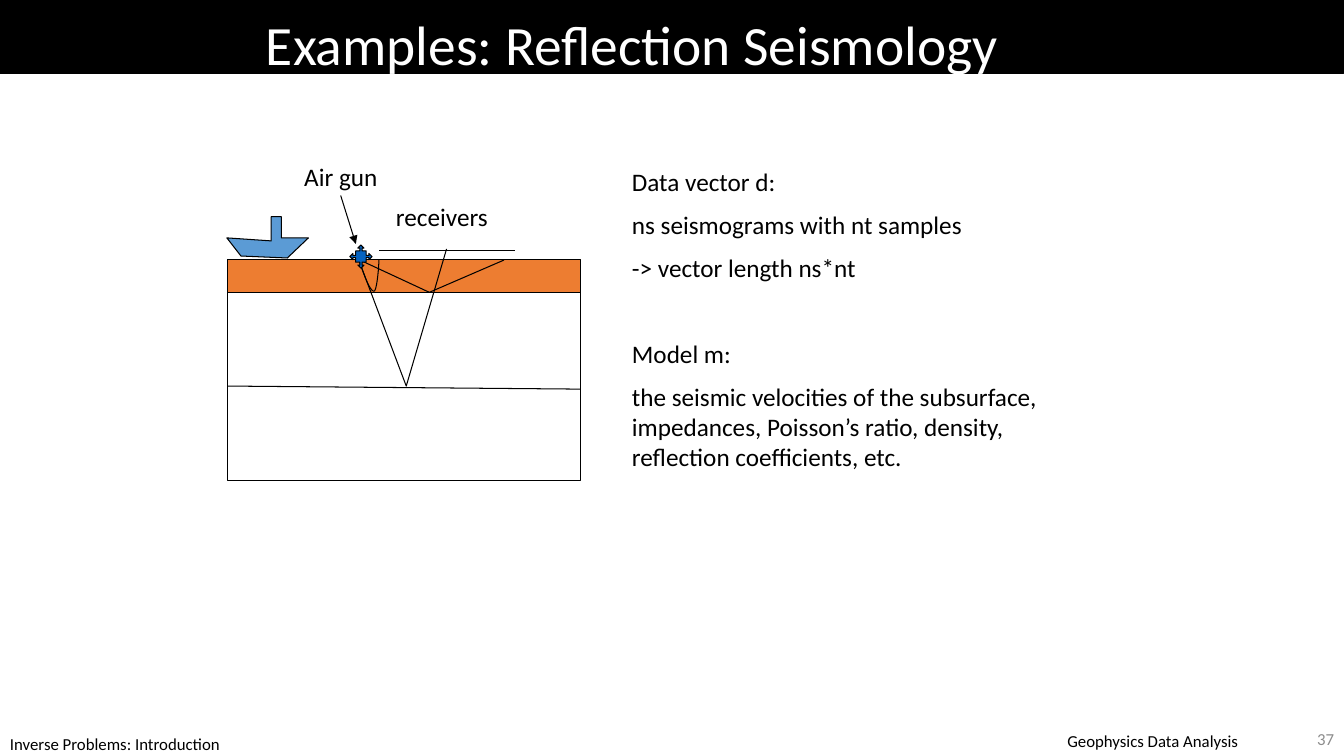
import pptx
import pptx.dml.color
import pptx.enum.shapes
import pptx.enum.text
import pptx.oxml
import pptx.oxml.ns
import pptx.util

SHAPES = pptx.enum.shapes.MSO_SHAPE
ANCHORS = pptx.enum.text.MSO_ANCHOR
ALIGNMENTS = pptx.enum.text.PP_ALIGN
WIDTH = pptx.util.Inches(13.33)
HEIGHT = pptx.util.Inches(7.5)
COLORS = {
    "ink": "000000",
    "paper": "FFFFFF",
    "page number": "8C8C8C",
    "water": "ED7D31",
    "ship": "5B9BD5",
    "air gun": "0563C1",
}
EARTH_LEFT, EARTH_WIDTH = 16.95, 26.25


def color(name):
    """Return the named colour."""
    return pptx.dml.color.RGBColor.from_string(COLORS[name])


def column(share):
    """Convert a percentage of the slide's width to a length."""
    return round(WIDTH * share / 100)


def row(share):
    """Convert a percentage of the slide's height to a length."""
    return round(HEIGHT * share / 100)


def place(left, top, width, height):
    """Convert a box in grid units to lengths."""
    return column(left), row(top), column(width), row(height)


def add_text(slide, box, paragraphs, size, ink="ink", wrap=True,
             anchor=ANCHORS.TOP, alignment=ALIGNMENTS.LEFT, spacing=None):
    """Add a text box from pairs of wording and space before."""
    frame = slide.shapes.add_textbox(*place(*box)).text_frame
    frame.word_wrap = wrap
    frame.vertical_anchor = anchor
    for index, (wording, space) in enumerate(paragraphs):
        paragraph = frame.add_paragraph() if index else frame.paragraphs[0]
        paragraph.text = wording
        paragraph.alignment = alignment
        paragraph.line_spacing = spacing
        paragraph.space_before = pptx.util.Pt(space)
        paragraph.font.name = "Calibri"
        paragraph.font.size = pptx.util.Pt(size)
        paragraph.font.color.rgb = color(ink)


def outline(item):
    """Give an element the thin black line."""
    item.line.color.rgb = color("ink")
    item.line.width = pptx.util.Pt(0.75)


def style_shape(shape, fill):
    """Set the fill and outline of a shape."""
    shape.shadow.inherit = False
    if fill:
        shape.fill.solid()
        shape.fill.fore_color.rgb = color(fill)
    else:
        shape.fill.background()
    outline(shape)


def add_preset(slide, kind, box, fill=None):
    """Add a preset shape."""
    shape = slide.shapes.add_shape(kind, *place(*box))
    style_shape(shape, fill)
    return shape


def add_outline(slide, points, fill=None):
    """Add a freeform through grid points, closed when it is filled."""
    start, *others = [(column(x), row(y)) for x, y in points]
    builder = slide.shapes.build_freeform(*start, scale=1.0)
    builder.add_line_segments(others, close=fill is not None)
    style_shape(builder.convert_to_shape(), fill)


def add_line(slide, start, end, arrow=False):
    """Add a straight line, with an arrowhead at its end if wanted."""
    line = slide.shapes.add_connector(
        pptx.enum.shapes.MSO_CONNECTOR.STRAIGHT,
        column(start[0]), row(start[1]), column(end[0]), row(end[1]))
    outline(line)
    if arrow:
        head = pptx.oxml.parse_xml(
            f'<a:tailEnd {pptx.oxml.ns.nsdecls("a")} type="triangle"/>')
        line.line._get_or_add_ln().append(head)
    line._element.spPr.append(pptx.oxml.parse_xml(
        f'<a:effectLst {pptx.oxml.ns.nsdecls("a")}/>'))


def bezier(start, first, second, end, steps=12):
    """Return points along a cubic curve."""
    shares = [step / steps for step in range(steps + 1)]
    return [tuple((1 - t) ** 3 * a + 3 * (1 - t) ** 2 * t * b
                  + 3 * (1 - t) * t ** 2 * c + t ** 3 * d
                  for a, b, c, d in zip(start, first, second, end))
            for t in shares]


def add_frame(slide):
    """Add the title band, title and footers."""
    add_preset(slide, SHAPES.RECTANGLE, (0, 0, 100, 9.73), "ink")
    add_text(slide, (78.68, 96, 16.05, 4), [("Geophysics Data Analysis", 0)], 12,
             wrap=False)
    add_text(slide, (0, 96.4, 24.6, 4), [("Inverse Problems: Introduction", 0)], 12)
    add_text(slide, (19.05, 2.93, 63.75, 6.67),
             [("Examples: Reflection Seismology", 0)], 39.6, "paper",
             anchor=ANCHORS.MIDDLE, spacing=0.9)
    add_text(slide, (76.2, 95.47, 23.8, 4.53), [("37", 0)], 12, "page number",
             anchor=ANCHORS.MIDDLE, alignment=ALIGNMENTS.RIGHT)


def add_survey(slide):
    """Add the marine survey with its layers, ship, rays and labels."""
    add_preset(slide, SHAPES.RECTANGLE, (EARTH_LEFT, 34.4, EARTH_WIDTH, 29.2))
    add_preset(slide, SHAPES.RECTANGLE, (EARTH_LEFT, 34.27, EARTH_WIDTH, 4.4), "water")
    add_line(slide, (28.2, 33.2), (38.33, 33.2))
    ship = [(16.88, 31.47), (17.93, 33.87), (21.38, 34.13), (22.95, 31.47),
            (20.93, 31.47), (20.93, 28.67), (20.18, 28.67), (20.18, 31.87)]
    add_outline(slide, ship, "ship")
    direct_wave = bezier((26.7, 34.27), (27.08, 36.4), (27.53, 38.53), (27.83, 38.53))
    direct_wave += bezier((27.83, 38.53), (28.05, 38.53), (28.2, 35.07), (28.2, 34.4))[1:]
    shallow_ray = [(26.78, 34.4), (31.95, 38.67), (37.5, 34.4)]
    deep_ray = [(26.78, 34.8), (30.23, 51.07), (33.23, 32.93)]
    for wave in (direct_wave, shallow_ray, deep_ray):
        add_outline(slide, wave)
    add_line(slide, (EARTH_LEFT, 51.07), (EARTH_LEFT + EARTH_WIDTH, 51.47))
    add_text(slide, (28.73, 26, 9.15, 5.33), [("receivers", 0)], 18, wrap=False)
    air_gun = add_preset(slide, SHAPES.QUAD_ARROW_CALLOUT,
                         (26.03, 32.4, 1.65, 3.07), "air gun")
    for index, share in enumerate((0.1, 0.14, 0.14, 0.48)):
        air_gun.adjustments[index] = share
    add_text(slide, (21.9, 20.67, 7.43, 5.33), [("Air gun", 0)], 18, wrap=False)
    add_line(slide, (25.35, 25.87), (26.48, 32.27), arrow=True)


def main():
    """Build the slide and save it."""
    presentation = pptx.Presentation()
    presentation.slide_width, presentation.slide_height = WIDTH, HEIGHT
    slide = presentation.slides.add_slide(presentation.slide_layouts[6])
    add_frame(slide)
    add_text(slide, (46.28, 21.33, 34.28, 59.47), [
        ("Data vector d:", 0),
        ("ns seismograms with nt samples", 9),
        ("-> vector length ns*nt", 9),
        ("Model m:", 40),
        ("the seismic velocities of the subsurface, impedances, Poisson’s ratio, "
         "density, reflection coefficients, etc.", 9),
    ], 18)
    add_survey(slide)
    presentation.save("out.pptx")


if __name__ == "__main__":
    main()
